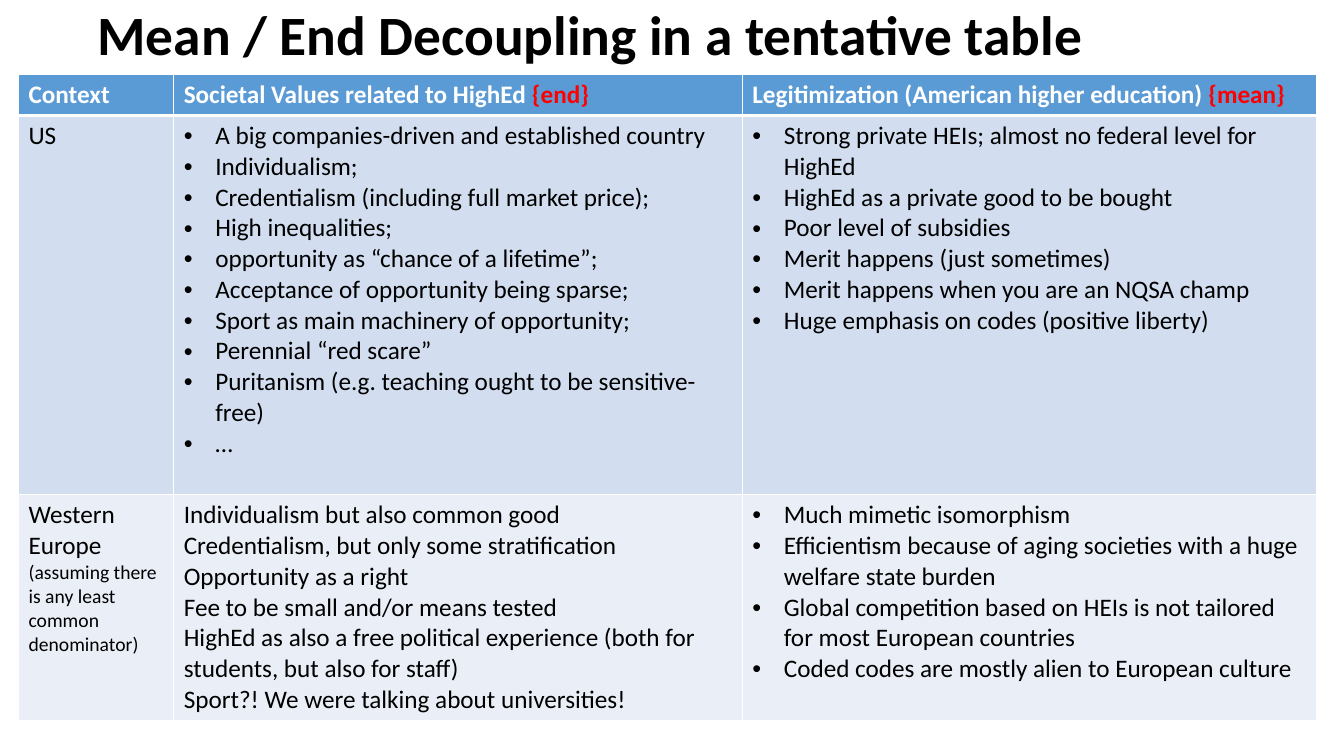
from lxml import etree
from pptx import Presentation
from pptx.dml.color import RGBColor
from pptx.enum.text import MSO_ANCHOR
from pptx.oxml.ns import qn
from pptx.util import Pt

MIDDLE = MSO_ANCHOR.MIDDLE
FONT = "Calibri"
COLORS = {"text": "000000", "white": "FFFFFF", "accent": "FF0000",
          "header": "5B9BD5", "us": "D2DEEF", "europe": "EAEFF7"}

TITLE = "Mean / End Decoupling in a tentative table"

# Header cells: a label and an optional highlighted tag
HEADERS = [
    ("Context", ""),
    ("Societal Values related to HighEd ", "{end}"),
    ("Legitimization (American higher education) ", "{mean}"),
]
US_VALUES = [
    "A big companies-driven and established country",
    "Individualism;",
    "Credentialism (including full market price);",
    "High inequalities;",
    "opportunity as “chance of a lifetime”;",
    "Acceptance of opportunity being sparse;",
    "Sport as main machinery of opportunity;",
    "Perennial “red scare”",
    "Puritanism (e.g. teaching ought to be sensitive-free)",
    "…",
]
US_LEGITIMIZATION = [
    "Strong private HEIs; almost no federal level for HighEd",
    "HighEd as a private good to be bought",
    "Poor level of subsidies",
    "Merit happens (just sometimes)",
    "Merit happens when you are an NQSA champ",
    "Huge emphasis on codes (positive liberty)",
]
EUROPE_VALUES = [
    "Individualism but also common good",
    "Credentialism, but only some stratification",
    "Opportunity as a right",
    "Fee to be small and/or means tested",
    "HighEd as also a free political experience (both for students, but also for staff)",
    "Sport?! We were talking about universities!",
]
EUROPE_LEGITIMIZATION = [
    "Much mimetic isomorphism",
    "Efficientism because of aging societies with a huge welfare state burden",
    "Global competition based on HEIs is not tailored for most European countries",
    "Coded codes are mostly alien to European culture",
]
# Context rows: fill, context, context note, then (lines, bulleted) per column
CONTEXTS = [
    ("us", "US", "", [(US_VALUES, True), (US_LEGITIMIZATION, True)]),
    ("europe", "Western Europe", "(assuming there is any least common denominator)",
     [(EUROPE_VALUES, False), (EUROPE_LEGITIMIZATION, True)]),
]

SLIDE_SIZE = (960, 540)
TITLE_BOX = (62.6, 0, 828, 53.4)
TABLE_LEFT, TABLE_TOP = 13.2, 53.4
COLUMN_WIDTHS = [110.9, 406.1, 410.4]
ROW_HEIGHTS = [29.2, 270.8, 161]
TITLE_SIZE, BODY_SIZE, NOTE_SIZE = 39.6, 18, 14
BULLET_INDENT = 22.5
THIN, THICK = 1, 3


def add_run(paragraph, text, size=BODY_SIZE, color="text", bold=False):
    run = paragraph.add_run()
    run.text = text
    run.font.name = FONT
    run.font.size = Pt(size)
    run.font.bold = bold
    run.font.color.rgb = RGBColor.from_string(COLORS[color])


def add_bullet(paragraph):
    properties = paragraph._p.get_or_add_pPr()
    properties.set("marL", str(Pt(BULLET_INDENT)))
    properties.set("indent", str(-Pt(BULLET_INDENT)))
    etree.SubElement(properties, qn("a:buFont")).set("typeface", "Arial")
    etree.SubElement(properties, qn("a:buChar")).set("char", "•")


def style_cell(cell, fill, top, bottom):
    """Draw the white borders, then fill: the schema wants this order."""
    properties = cell._tc.get_or_add_tcPr()
    for side, width in (("L", THIN), ("R", THIN), ("T", top), ("B", bottom)):
        line = etree.SubElement(properties, qn(f"a:ln{side}"), w=str(Pt(width)))
        solid = etree.SubElement(line, qn("a:solidFill"))
        etree.SubElement(solid, qn("a:srgbClr")).set("val", COLORS["white"])
    cell.fill.solid()
    cell.fill.fore_color.rgb = RGBColor.from_string(COLORS[fill])


def write_lines(cell, lines, bulleted):
    frame = cell.text_frame
    for index, line in enumerate(lines):
        paragraph = frame.add_paragraph() if index else frame.paragraphs[0]
        if bulleted:
            add_bullet(paragraph)
        add_run(paragraph, line)


def add_title(slide):
    frame = slide.shapes.add_textbox(*map(Pt, TITLE_BOX)).text_frame
    frame.word_wrap = True
    frame.vertical_anchor = MIDDLE
    paragraph = frame.paragraphs[0]
    paragraph.line_spacing = 0.9
    add_run(paragraph, TITLE, TITLE_SIZE, bold=True)


def add_context_table(slide):
    table = slide.shapes.add_table(
        len(ROW_HEIGHTS), len(COLUMN_WIDTHS), Pt(TABLE_LEFT), Pt(TABLE_TOP),
        Pt(sum(COLUMN_WIDTHS)), Pt(sum(ROW_HEIGHTS))).table
    for column, width in zip(table.columns, COLUMN_WIDTHS):
        column.width = Pt(width)
    for row, height in zip(table.rows, ROW_HEIGHTS):
        row.height = Pt(height)

    for column, (label, tag) in enumerate(HEADERS):
        cell = table.cell(0, column)
        style_cell(cell, "header", THIN, THICK)
        paragraph = cell.text_frame.paragraphs[0]
        add_run(paragraph, label, color="white", bold=True)
        if tag:
            add_run(paragraph, tag, color="accent", bold=True)

    for row, (fill, context, note, columns) in enumerate(CONTEXTS, 1):
        cells = [table.cell(row, column) for column in range(len(HEADERS))]
        for cell in cells:
            style_cell(cell, fill, THICK if row == 1 else THIN, THIN)
        write_lines(cells[0], [context], False)
        if note:
            add_run(cells[0].text_frame.add_paragraph(), note, NOTE_SIZE)
        for cell, (lines, bulleted) in zip(cells[1:], columns):
            write_lines(cell, lines, bulleted)


def main():
    deck = Presentation()
    deck.slide_width, deck.slide_height = map(Pt, SLIDE_SIZE)
    slide = deck.slides.add_slide(deck.slide_layouts[6])
    add_title(slide)
    add_context_table(slide)
    deck.save("out.pptx")


if __name__ == "__main__":
    main()
